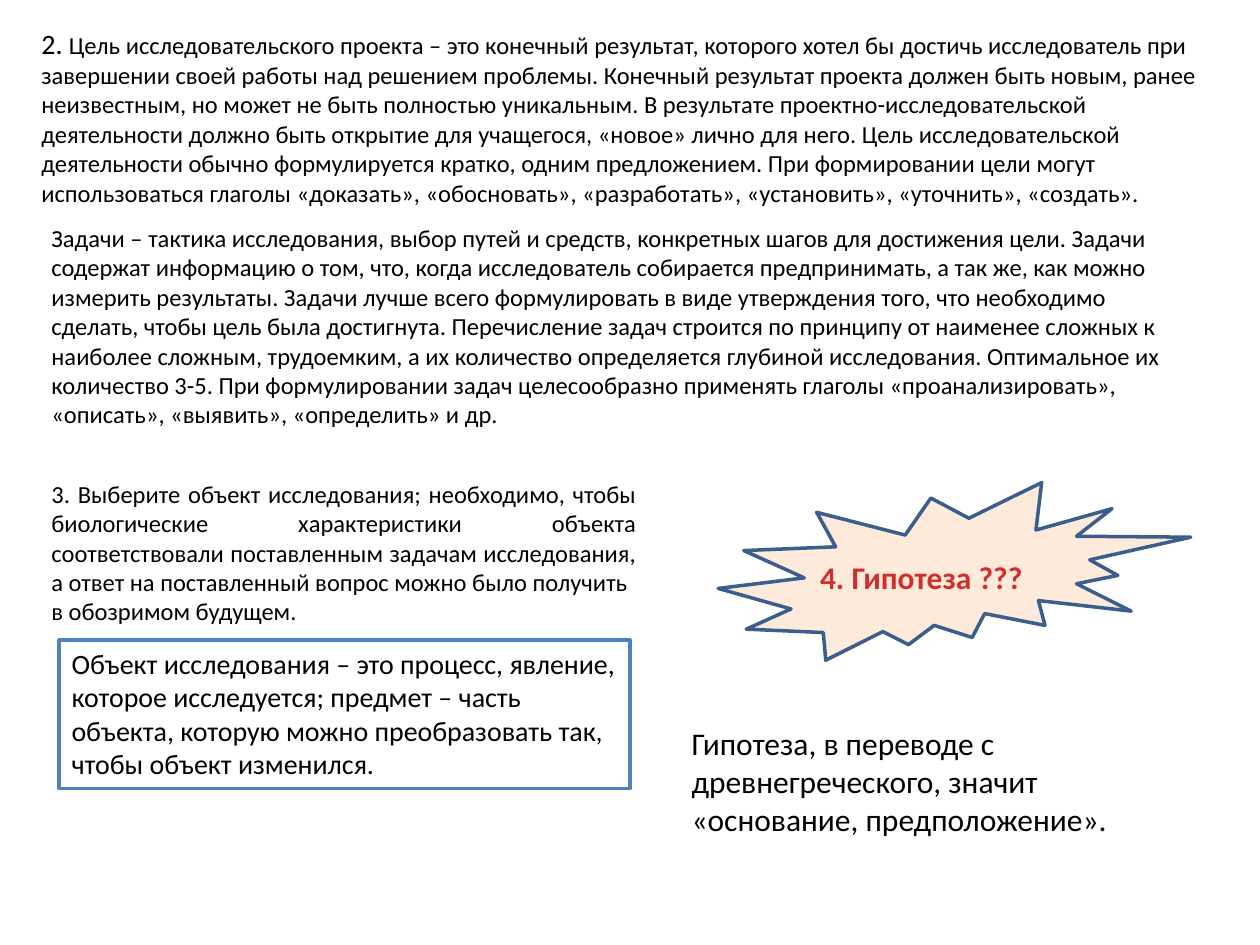
from lxml import etree
from pptx import Presentation
from pptx.dml.color import RGBColor
from pptx.enum.shapes import MSO_SHAPE
from pptx.enum.text import MSO_ANCHOR, MSO_AUTO_SIZE, PP_ALIGN
from pptx.oxml.ns import qn
from pptx.util import Inches, Pt

SEAL = MSO_SHAPE.EXPLOSION2
RECTANGLE = MSO_SHAPE.RECTANGLE
TOP = MSO_ANCHOR.TOP
FIT_SHAPE = MSO_AUTO_SIZE.SHAPE_TO_FIT_TEXT
LEFT, JUSTIFY = PP_ALIGN.LEFT, PP_ALIGN.JUSTIFY

FONT = "Calibri"
COLORS = {
    "text": "000000",
    "paper": "FFFFFF",
    "frame": "4F81BD",
    "seal": "FDEADA",
    "seal_line": "3A5F8C",
}
HYPOTHESIS_GRADIENT = [(0, "FC7C7A"), (75, "D02F2C"), (100, "C70500")]

GOAL = (
    "Цель исследовательского проекта – это конечный результат, которого хотел бы достичь "
    "исследователь при завершении своей работы над решением проблемы. Конечный результат "
    "проекта должен быть новым, ранее неизвестным, но может не быть полностью уникальным. "
    "В результате проектно-исследовательской деятельности должно быть открытие для учащегося, "
    "«новое» лично для него. Цель исследовательской деятельности обычно формулируется кратко, "
    "одним предложением. При формировании цели могут использоваться глаголы «доказать», "
    "«обосновать», «разработать», «установить», «уточнить», «создать»."
)
TASKS = (
    "Задачи – тактика исследования, выбор путей и средств, конкретных шагов для достижения "
    "цели. Задачи содержат информацию о том, что, когда исследователь собирается "
    "предпринимать, а так же, как можно измерить результаты. Задачи лучше всего формулировать "
    "в виде утверждения того, что необходимо сделать, чтобы цель была достигнута. Перечисление "
    "задач строится по принципу от наименее сложных к наиболее сложным, трудоемким, а их "
    "количество определяется глубиной исследования. Оптимальное их количество 3-5. При "
    "формулировании задач целесообразно применять глаголы «проанализировать», «описать», "
    "«выявить», «определить» и др."
)
OBJECT_CHOICE = [
    "3. Выберите объект исследования; необходимо, чтобы биологические характеристики объекта "
    "соответствовали поставленным задачам исследования, а ответ на поставленный вопрос можно "
    "было получить",
    "в обозримом будущем.",
]
OBJECT_DEFINITION = (
    "Объект исследования – это процесс, явление, которое исследуется; предмет – часть объекта, "
    "которую можно преобразовать так, чтобы объект изменился."
)
HYPOTHESIS = "Гипотеза, в переводе с древнегреческого, значит «основание, предположение»."


def color(name):
    return RGBColor.from_string(COLORS[name])


def write(shape, texts, size, alignment=LEFT):
    """Fill a shape with one paragraph per text and return its first paragraph."""
    frame = shape.text_frame
    frame.word_wrap = True
    frame.auto_size = FIT_SHAPE
    frame.vertical_anchor = TOP
    frame.text = "\n".join(texts)
    for paragraph in frame.paragraphs:
        paragraph.alignment = alignment
        paragraph.font.name = FONT
        paragraph.font.size = Pt(size)
        paragraph.font.color.rgb = color("text")
    return frame.paragraphs[0]


def add_text(slide, box, texts, size, alignment=LEFT):
    return write(slide.shapes.add_textbox(*map(Inches, box)), texts, size, alignment)


def add_outlined_shape(slide, kind, box, fill, line):
    shape = slide.shapes.add_shape(kind, *map(Inches, box))
    shape.shadow.inherit = False
    shape.fill.solid()
    shape.fill.fore_color.rgb = color(fill)
    shape.line.color.rgb = color(line)
    shape.line.width = Pt(2)
    return shape


def set_gradient(run, stops):
    """Colour a run with a top-to-bottom gradient of (percent, colour) stops."""
    gradient = etree.Element(qn("a:gradFill"))
    stop_list = etree.SubElement(gradient, qn("a:gsLst"))
    for percent, value in stops:
        stop = etree.SubElement(stop_list, qn("a:gs"), pos=str(percent * 1000))
        etree.SubElement(stop, qn("a:srgbClr"), val=value)
    etree.SubElement(gradient, qn("a:lin"), ang="5400000")
    run.font._element.insert(0, gradient)


def add_goal(slide, box):
    paragraph = add_text(slide, box, ["2. "], 16)
    body = paragraph.add_run()
    body.text = GOAL
    body.font.size = Pt(14)


def add_object_definition(slide, box):
    frame = add_outlined_shape(slide, RECTANGLE, box, "paper", "frame")
    write(frame, [OBJECT_DEFINITION], 16)


def add_hypothesis_seal(slide, box):
    left, top, width, _ = box
    add_outlined_shape(slide, SEAL, box, "seal", "seal_line")
    label_box = (left + 0.71, top + 0.55, width - 1.17, 0.4)
    paragraph = add_text(slide, label_box, ["4. Гипотеза ???"], 18)
    paragraph.font.bold = True
    set_gradient(paragraph.runs[0], HYPOTHESIS_GRADIENT)


def main():
    presentation = Presentation()
    presentation.slide_width = Inches(10)
    presentation.slide_height = Inches(7.5)
    slide = presentation.slides.add_slide(presentation.slide_layouts[6])

    add_goal(slide, (0.23, 0.16, 9.38, 1.55))
    add_text(slide, (0.31, 1.72, 9.3, 1.75), [TASKS], 14)
    add_text(slide, (0.31, 3.75, 4.84, 1.28), OBJECT_CHOICE, 14, JUSTIFY)
    add_object_definition(slide, (0.47, 5.08, 4.53, 1.18))
    add_hypothesis_seal(slide, (5.7, 3.83, 3.75, 1.41))
    add_text(slide, (5.39, 5.7, 4.14, 1.01), [HYPOTHESIS], 18)

    presentation.save("out.pptx")


if __name__ == "__main__":
    main()
